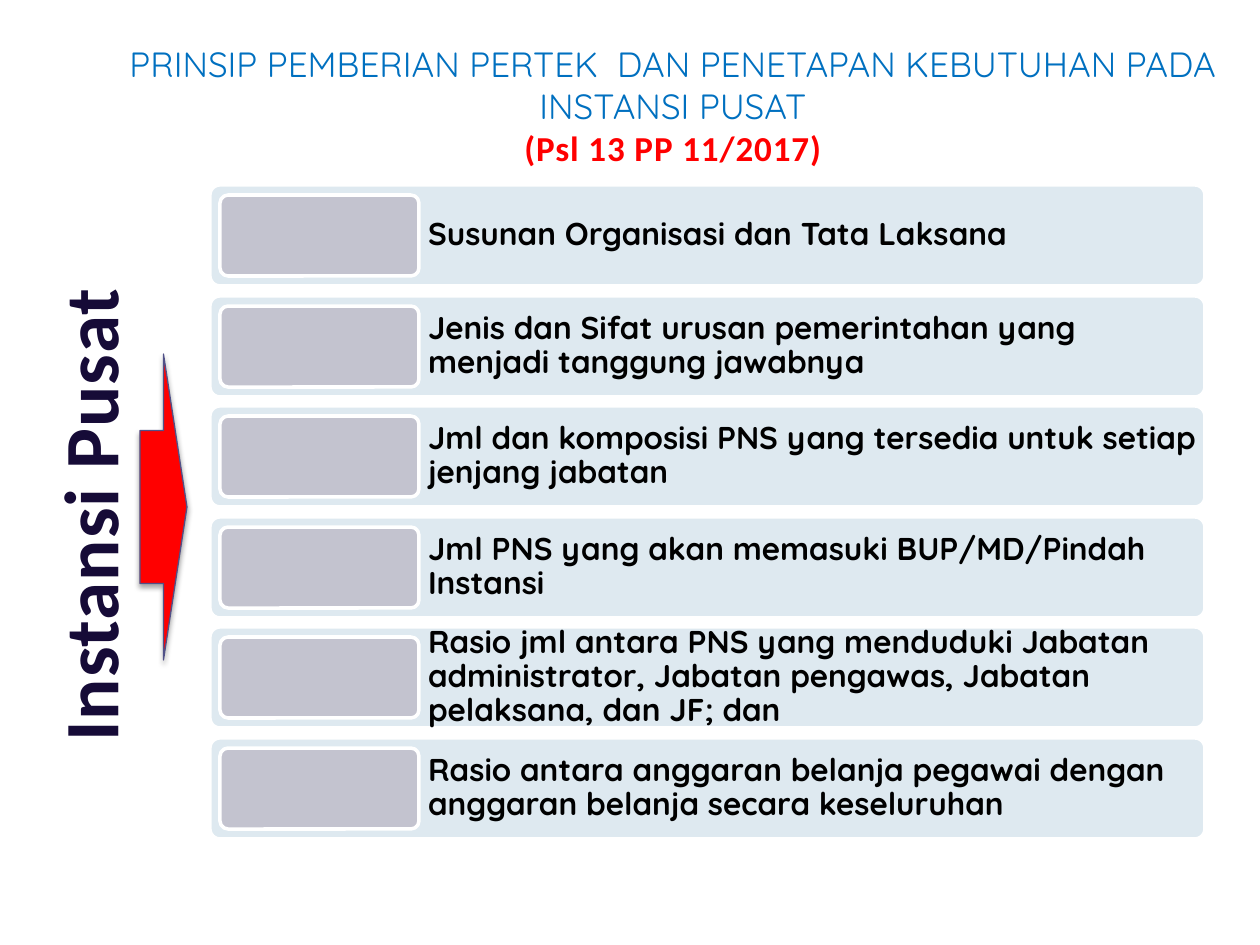
from lxml.etree import SubElement
from pptx import Presentation
from pptx.dml.color import RGBColor
from pptx.enum.shapes import MSO_SHAPE
from pptx.enum.text import MSO_ANCHOR, PP_ALIGN
from pptx.oxml.ns import qn
from pptx.util import Emu, Pt

SCALE = 914400 / 126
COLORS = {
    "title": "0070C0", "red": "FF0000", "navy": "160B37", "black": "000000",
    "white": "FFFFFF", "row": "DEE9F0", "tile": "C3C3CF", "edge": "505188",
}
ROWS = [
    "Susunan Organisasi dan Tata Laksana",
    "Jenis dan Sifat urusan pemerintahan yang menjadi tanggung jawabnya",
    "Jml dan komposisi PNS yang tersedia untuk setiap jenjang jabatan",
    "Jml PNS yang akan memasuki BUP/MD/Pindah Instansi",
    "Rasio jml antara PNS yang menduduki Jabatan administrator, "
    "Jabatan pengawas, Jabatan pelaksana, dan JF; dan",
    "Rasio antara anggaran belanja pegawai dengan anggaran belanja "
    "secara keseluruhan",
]


def px(n):
    return Emu(round(n * SCALE))


def color(name):
    return RGBColor.from_string(COLORS[name])


def add_run(para, text, size=18, font="Quicksand", ink="black", bold=False, gap=0):
    """Add a formatted run; gap is letter spacing in hundredths of a point."""
    run = para.add_run()
    run.text = text
    run.font.size = Pt(size)
    run.font.name = font
    run.font.bold = bold
    run.font.color.rgb = color(ink)
    if gap:
        run.font._element.set("spc", str(gap))


def add_box(slide, box, wrap=True, align=PP_ALIGN.LEFT, inset=None):
    """Add a text box and return it with its first paragraph."""
    shape = slide.shapes.add_textbox(*map(px, box))
    frame = shape.text_frame
    frame.word_wrap = wrap
    frame.vertical_anchor = MSO_ANCHOR.MIDDLE
    if inset is not None:
        frame.margin_left = frame.margin_right = px(inset)
        frame.margin_top = frame.margin_bottom = px(inset)
    para = frame.paragraphs[0]
    para.alignment = align
    return shape, para


def add_shape(slide, kind, box, fill, line, width):
    shape = slide.shapes.add_shape(kind, *map(px, box))
    shape.shadow.inherit = False
    shape.fill.solid()
    shape.fill.fore_color.rgb = color(fill)
    shape.line.color.rgb = color(line)
    shape.line.width = Pt(width)
    return shape


def add_title(slide, box):
    para = add_box(slide, box, align=PP_ALIGN.CENTER)[1]
    add_run(para, "PRINSIP PEMBERIAN PERTEK  DAN PENETAPAN KEBUTUHAN PADA "
            "INSTANSI PUSAT", size=20, ink="title")
    para.add_line_break()
    add_run(para, "(Psl 13 PP 11/2017)", size=20, font="Calibri", ink="red",
            bold=True, gap=50)


def add_row(slide, box, text):
    left, top, width, height = box
    pad, tile = 10, 199
    start = pad + tile
    parts = [(box, "row"),
             ((left + pad, top + pad, tile, height - 2 * pad), "tile")]
    for part, fill in parts:
        shape = add_shape(slide, MSO_SHAPE.ROUNDED_RECTANGLE, part, fill, "white", 2)
        shape.adjustments[0] = 0.1
    para = add_box(slide, (left + start, top, width - start, height), inset=9)[1]
    para.line_spacing = 0.9
    add_run(para, text, bold=True)


def add_list(slide, box):
    """Stack the rows evenly from the top to the bottom of the box."""
    left, top, width, height = box
    tall = 101
    for i, text in enumerate(ROWS):
        shift = round((height - tall) * i / (len(ROWS) - 1))
        add_row(slide, (left, top + shift, width, tall), text)


def add_label(slide, box):
    shape, para = add_box(slide, box, wrap=False, align=PP_ALIGN.CENTER)
    shape.rotation = 270
    add_run(para, "Instansi Pusat", size=44, font="Calibri", ink="navy",
            bold=True, gap=50)


def add_arrow(slide, box):
    shape = add_shape(slide, MSO_SHAPE.RIGHT_ARROW, box, "red", "edge", 0.75)
    effects = shape._element.spPr.find(qn("a:effectLst"))
    shadow = SubElement(effects, qn("a:outerShdw"), blurRad=str(Pt(3.1)),
                        dist=str(Pt(1.8)), dir="5400000", rotWithShape="0")
    shade = SubElement(shadow, qn("a:srgbClr"), val=COLORS["black"])
    SubElement(shade, qn("a:alpha"), val="35000")


def main():
    deck = Presentation()
    deck.slide_width, deck.slide_height = px(1260), px(945)
    slide = deck.slides.add_slide(deck.slide_layouts[6])
    add_title(slide, (105, 26, 1136, 159))
    add_list(slide, (210, 185, 995, 654))
    add_label(slide, (-154, 462, 483, 106))
    add_arrow(slide, (140, 354, 47, 306))
    deck.save("out.pptx")


if __name__ == "__main__":
    main()
